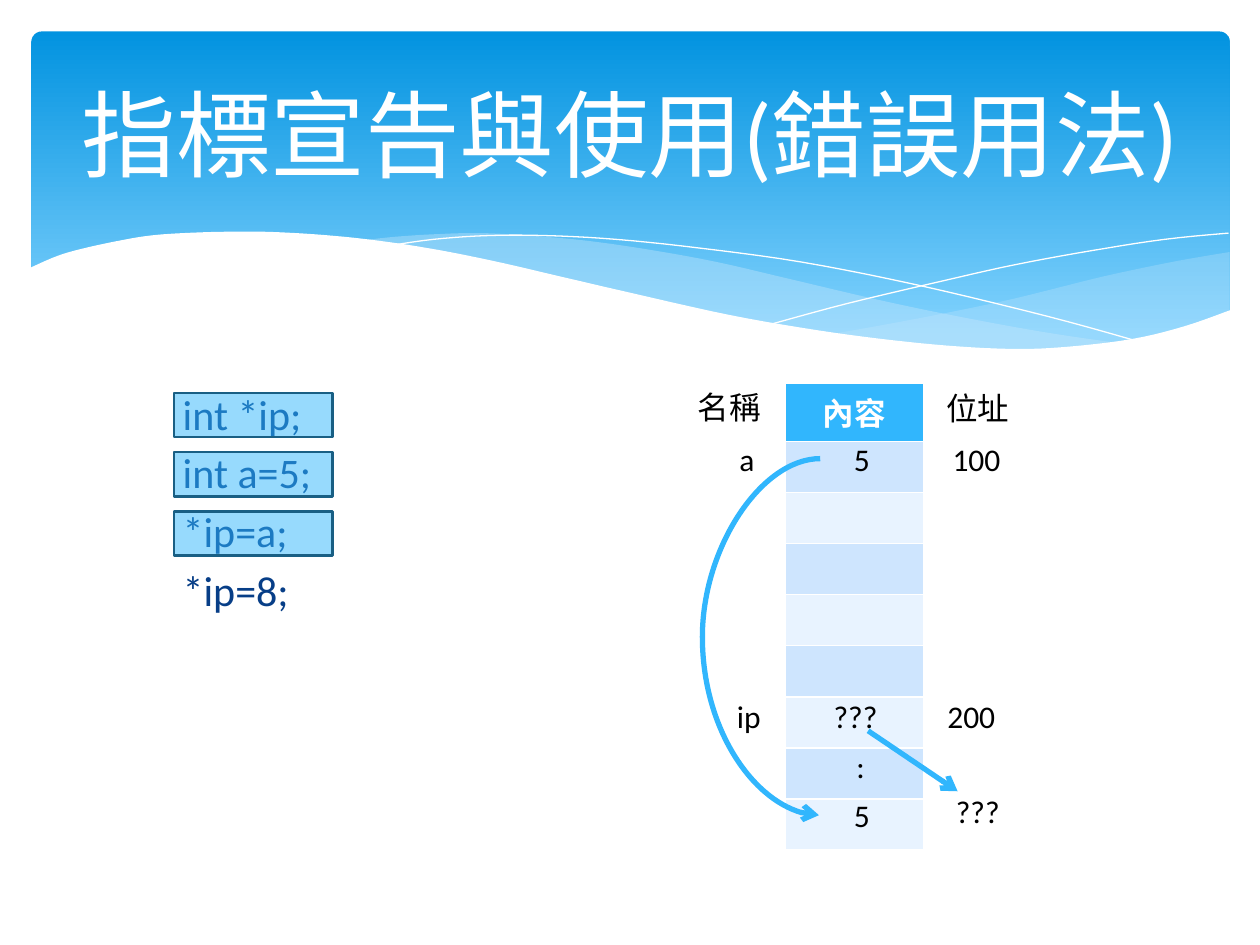
from pptx import Presentation
from pptx.dml.color import RGBColor as Rgb
from pptx.enum.shapes import MSO_CONNECTOR as Link, MSO_SHAPE as Kind
from pptx.enum.text import MSO_ANCHOR as Anchor, MSO_AUTO_SIZE as Auto, PP_ALIGN as Align
from pptx.oxml.ns import qn
from pptx.util import Inches, Pt
from lxml.etree import SubElement as Sub

INK = {
    "white": "FFFFFF", "black": "000000", "navy": "073E87", "sky": "31B6FD",
    "edge": "195F84", "top": "0293E0", "low": "83D3FE", "mist": "C6E7FC",
    "odd": "CEE5FE", "even": "E8F3FF",
}
TITLE = "指標宣告與使用(錯誤用法)"
CODE = ["int *ip;", "int a=5;", "*ip=a;", "*ip=8;"]
HEAD = "內容"
ROWS = 9
LABELS = [
    ("位址", 7.41, 3.04, 0.71), ("名稱", 5.44, 3.03, 0.71),
    ("ip", 5.75, 5.48, 0.43), ("a", 5.77, 3.44, 0.34),
    ("200", 7.42, 5.48, 0.68),
]
VALUES = [
    ("100", 7.41, 3.44), ("5", 6.5, 3.44), ("???", 6.45, 5.48),
    ("???", 7.42, 6.24), (":", 6.49, 5.88), ("5", 6.5, 6.27),
]
BANDS = [
    ([[(9.76, 2), (9.35, 2.07), (8.91, 2.16), (8.61, 2.23), (8.05, 2.37), (7.53, 2.48),
       (7.06, 2.57), (6.61, 2.65)],
      [(6.61, 2.65), (7.05, 2.71), (7.45, 2.75), (7.81, 2.77), (8.14, 2.78), (8.54, 2.76),
       (8.89, 2.72), (9.21, 2.65), (9.49, 2.57), (9.76, 2.47)]], "mist", 29),
    ([[(8.93, 2.73), (8.37, 2.65), (7.75, 2.54), (7.06, 2.4), (6.29, 2.22), (5.69, 2.08),
       (5.14, 1.98), (4.65, 1.91), (4.2, 1.87), (3.8, 1.85), (3.44, 1.86), (3.13, 1.88),
       (2.86, 1.91)],
      [(2.86, 1.91), (3.42, 1.99), (4.04, 2.11), (4.49, 2.22), (5.3, 2.4), (6.01, 2.55),
       (6.65, 2.66), (7.22, 2.74), (7.73, 2.77), (8.18, 2.78), (8.57, 2.77), (8.93, 2.73)]],
     "mist", 40),
    ([[(3.09, 1.95), (3.44, 1.9), (3.87, 1.87), (4.33, 1.87), (4.89, 1.9), (5.56, 1.97),
       (6.36, 2.08), (7.27, 2.26), (8.31, 2.51), (9.07, 2.72)]], None, 0),
    ([[(6.13, 2.57), (6.72, 2.41), (7.48, 2.23), (8.06, 2.1), (8.66, 1.99), (9.24, 1.9),
       (9.75, 1.85)]], None, 0),
    ([[(9.77, 2.46), (9.4, 2.59), (8.99, 2.69), (8.5, 2.75), (8.09, 2.77), (7.61, 2.75),
       (7.08, 2.7), (6.48, 2.62), (5.79, 2.5), (5.03, 2.33), (4.47, 2.2), (3.91, 2.07),
       (3.4, 1.97), (2.92, 1.9), (2.5, 1.86), (2.11, 1.84), (1.77, 1.84), (1.46, 1.85),
       (1.19, 1.87), (0.95, 1.91), (0.67, 1.97), (0.46, 2.03), (0.23, 2.13)],
      [(0.23, 3.29), (9.77, 3.29)]], "white", 100),
]


def box(*nums):
    return [Inches(n) for n in nums]


def rgb(name):
    return Rgb.from_string(INK[name])


def write(frame, text, size=18, ink="black", align=Align.LEFT, bold=False):
    frame.text = text
    for par in frame.paragraphs:
        par.alignment = align
        for run in par.runs:
            font = run.font
            font.name, font.size, font.bold = "Calibri", Pt(size), bold
            font.color.rgb = rgb(ink)


def label(text, x, y, w, wrap, align):
    frame = shapes.add_textbox(*box(x, y, w, 0.4)).text_frame
    frame.word_wrap = wrap
    write(frame, text, align=align)


def paint(shape, ink, alpha=100):
    shape.fill.solid()
    shape.fill.fore_color.rgb = rgb(ink)
    if alpha < 100:
        tint = shape.element.spPr.find(qn("a:solidFill"))[0]
        Sub(tint, qn("a:alpha")).set("val", str(alpha * 1000))


def bend(pts, steps=5):
    ends = [pts[0], *pts, pts[-1]]
    out = [pts[0]]
    for a, b, c, d in zip(ends, ends[1:], ends[2:], ends[3:]):
        for k in range(1, steps + 1):
            t = k / steps
            out.append(tuple(
                (2 * q + (r - p) * t + (2 * p - 5 * q + 4 * r - s) * t ** 2
                 + (3 * q - p - 3 * r + s) * t ** 3) / 2
                for p, q, r, s in zip(a, b, c, d)))
    return out


def band(parts, ink, alpha):
    pts = [p for part in parts for p in (bend(part) if len(part) > 2 else part)]
    spots = [box(*p) for p in pts]
    form = shapes.build_freeform(*spots[0], scale=1)
    form.add_line_segments(spots[1:], close=ink is not None)
    shape = form.convert_to_shape()
    shape.shadow.inherit = False
    if ink:
        paint(shape, ink, alpha)
        shape.line.fill.background()
    else:
        shape.fill.background()
        shape.line.color.rgb = rgb("white")
        shape.line.width = Pt(0)


def arrow(kind, *ends):
    link = shapes.add_connector(kind, *box(*ends))
    link.line.color.rgb = rgb("sky")
    link.line.width = Pt(3)
    Sub(link.element.spPr.find(qn("a:ln")), qn("a:tailEnd")).set("type", "arrow")
    Sub(link.element.spPr, qn("a:effectLst"))
    return link


deck = Presentation()
deck.slide_width, deck.slide_height = box(10, 7.5)
slide = deck.slides.add_slide(deck.slide_layouts[1])
shapes = slide.shapes

sky = shapes.add_shape(Kind.ROUNDED_RECTANGLE, *box(0.25, 0.25, 9.51, 2.7))
sky.adjustments[0] = 0.03
sky.shadow.inherit = False
sky.line.fill.background()
sky.fill.gradient()
sky.fill.gradient_angle = 270
for stop, ink, pos in zip(sky.fill.gradient_stops, ("top", "low"), (0, 0.9)):
    stop.color.rgb = rgb(ink)
    stop.position = pos
for item in BANDS:
    band(*item)

title, body = shapes.title, slide.placeholders[1]
for hold, spot in ((body, (1.35, 3.03, 2.55, 2.76)), (title, (0.5, 0.37, 9, 1.37))):
    hold.left, hold.top, hold.width, hold.height = box(*spot)
    hold.text_frame.auto_size = Auto.NONE
    hold.element.getparent().append(hold.element)
write(body.text_frame, "\n".join(CODE), 24, "navy")
for par in body.text_frame.paragraphs:
    props = par._p.get_or_add_pPr()
    props.set("marL", "0")
    props.set("indent", "0")
    Sub(props, qn("a:buNone"))
title.text_frame.vertical_anchor = Anchor.MIDDLE
write(title.text_frame, TITLE, 54, "white", Align.CENTER)

grid = shapes.add_table(ROWS, 1, *box(6.23, 3.04, 1.1, 3.65)).table
for i in range(ROWS):
    paint(grid.cell(i, 0), "sky" if i == 0 else "odd" if i % 2 else "even")
write(grid.cell(0, 0).text_frame, HEAD, 18, "white", Align.CENTER, True)

for text, x, y, w in LABELS:
    label(text, x, y, w, text == "200", Align.LEFT)
for i in range(3):
    mark = shapes.add_shape(Kind.RECTANGLE, *box(1.38, 3.12 + 0.47 * i, 1.26, 0.35))
    mark.shadow.inherit = False
    paint(mark, "sky", 50)
    mark.line.color.rgb = rgb("edge")
    mark.line.width = Pt(1.25)
for text, x, y in VALUES:
    label(text, x, y, 0.68, True, Align.CENTER)

arrow(Link.STRAIGHT, 6.89, 5.8, 7.6, 6.28)
arc = arrow(Link.CURVE, 6.51, 3.64, 6.5, 6.47)
guide = Sub(arc.element.spPr.find(qn("a:prstGeom")).find(qn("a:avLst")), qn("a:gd"))
guide.set("name", "adj1")
guide.set("fmla", "val 9500000")

deck.save("out.pptx")
